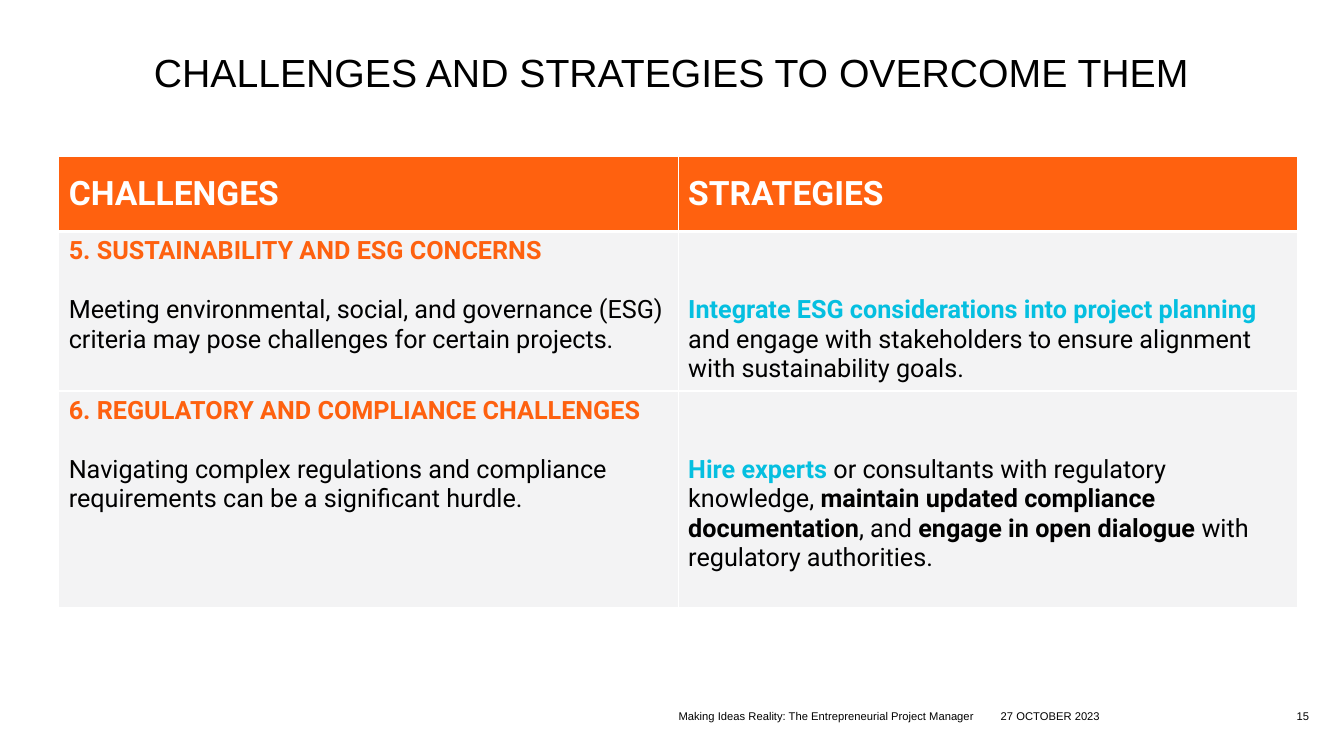
from lxml.etree import SubElement
from pptx import Presentation
from pptx.dml.color import RGBColor
from pptx.enum.text import MSO_ANCHOR as ANCHOR, PP_ALIGN as ALIGN
from pptx.oxml.ns import qn
from pptx.util import Cm, Pt

ORANGE, HEADING, CYAN = "FF610F", "FE610F", "05BFE0"
WHITE, BLACK, GREY = "FFFFFF", "000000", "F3F3F4"

HEADERS = ["CHALLENGES", "STRATEGIES"]
TOPICS = [
    ("5. SUSTAINABILITY AND ESG CONCERNS",
     "Meeting environmental, social, and governance (ESG) criteria may pose "
     "challenges for certain projects.",
     [("Integrate ESG considerations into project planning ", CYAN, True),
      ("and engage with stakeholders to ensure alignment with sustainability goals.",
       BLACK, False)]),
    ("6. REGULATORY AND COMPLIANCE CHALLENGES",
     "Navigating complex regulations and compliance requirements can be a "
     "significant hurdle.",
     [("Hire experts ", CYAN, True),
      ("or consultants with regulatory knowledge, ", BLACK, False),
      ("maintain updated compliance documentation", BLACK, True),
      (", and ", BLACK, False),
      ("engage in open dialogue ", BLACK, True),
      ("with regulatory authorities.", BLACK, False)]),
]
ROW_HEIGHTS = [1.88, 4.01, 5.46]
COLUMN_WIDTH = 15.61


def rgb(value):
    return RGBColor.from_string(value)


def set_all(obj, values):
    for name, value in values.items():
        setattr(obj, name, value)


def add_run(p, text, color, size, name, bold=False):
    r = p.add_run()
    r.text = text
    set_all(r.font, {"size": Pt(size), "name": name, "bold": bold})
    r.font.color.rgb = rgb(color)


def add_text(s, text, box, size, align=ALIGN.LEFT, anchor=ANCHOR.BOTTOM, spacing=1.0):
    tf = s.shapes.add_textbox(*map(Cm, box)).text_frame
    set_all(tf, {"word_wrap": True, "vertical_anchor": anchor, "margin_left": 0,
                 "margin_top": 0, "margin_right": 0, "margin_bottom": 0})
    p = tf.paragraphs[0]
    set_all(p, {"alignment": align, "line_spacing": spacing})
    add_run(p, text, BLACK, size, "Arial")


def add_borders(cell, top, bottom):
    tcPr = cell._tc.get_or_add_tcPr()
    for side, width in {"L": 1, "R": 1, "T": top, "B": bottom}.items():
        ln = SubElement(tcPr, qn(f"a:ln{side}"), w=str(Pt(width)))
        fill = SubElement(ln, qn("a:solidFill"))
        SubElement(fill, qn("a:srgbClr"), val=WHITE)


def fill_cell(cell, paragraphs, size, fill, top=1, bottom=1, **layout):
    add_borders(cell, top, bottom)
    cell.fill.solid()
    cell.fill.fore_color.rgb = rgb(fill)
    set_all(cell, layout)
    tf = cell.text_frame
    for i, runs in enumerate(paragraphs):
        p = tf.add_paragraph() if i else tf.paragraphs[0]
        if i:
            p.space_before = Pt(21)
        for text, color, bold in runs:
            add_run(p, text, color, size, "Roboto", bold)


def add_topics_table(s):
    table = s.shapes.add_table(len(ROW_HEIGHTS), len(HEADERS), Cm(1.48), Cm(3.95),
                               Cm(COLUMN_WIDTH * 2), Cm(sum(ROW_HEIGHTS))).table
    set_all(table, {"first_row": False, "horz_banding": False})
    for column in table.columns:
        column.width = Cm(COLUMN_WIDTH)
    for row, height in zip(table.rows, ROW_HEIGHTS):
        row.height = Cm(height)
    for i, header in enumerate(HEADERS):
        fill_cell(table.cell(0, i), [[(header, WHITE, True)]], 24, ORANGE,
                  bottom=3, vertical_anchor=ANCHOR.MIDDLE)
    for i, (heading, challenge, strategy) in enumerate(TOPICS, 1):
        top = 3 if i == 1 else 1
        fill_cell(table.cell(i, 0),
                  [[(heading, HEADING, True)], [(challenge, BLACK, False)]],
                  18, GREY, top)
        fill_cell(table.cell(i, 1), [strategy], 18, GREY, top, margin_top=Cm(1.61))


def main():
    prs = Presentation()
    set_all(prs, {"slide_width": Cm(33.87), "slide_height": Cm(19.05)})
    s = prs.slides.add_slide(prs.slide_layouts[6])
    add_text(s, "CHALLENGES AND STRATEGIES TO OVERCOME THEM", (0.86, 1.37, 32.11, 1.04),
             28, ALIGN.CENTER, ANCHOR.MIDDLE, 0.9)
    add_topics_table(s)
    add_text(s, "Making Ideas Reality: The Entrepreneurial Project Manager",
             (17.1, 17.65, 7.77, 0.56), 8)
    add_text(s, "27 OCTOBER 2023", (25.22, 17.65, 5.05, 0.56), 8)
    add_text(s, "15", (31.85, 17.65, 1.14, 0.56), 8, ALIGN.RIGHT)
    prs.save("out.pptx")


if __name__ == "__main__":
    main()
